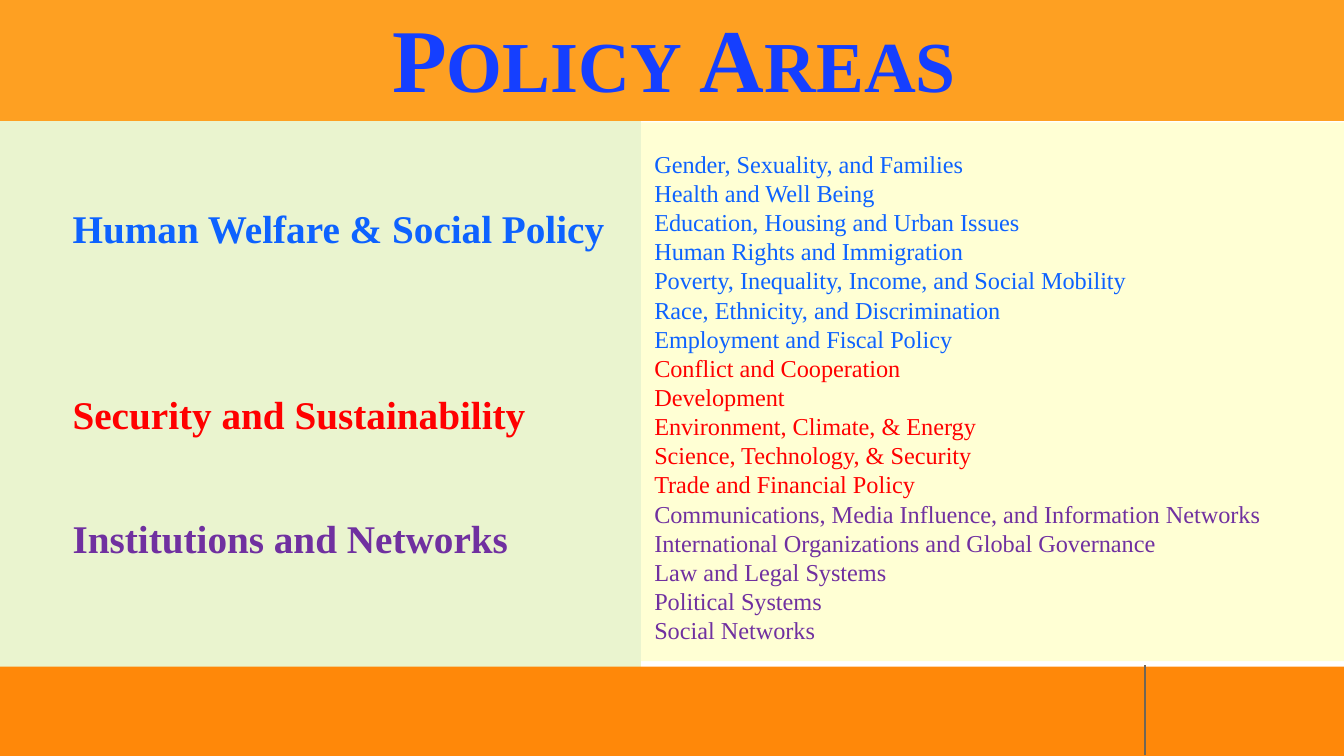
from dataclasses import dataclass

from lxml.etree import SubElement
from pptx import Presentation
from pptx.dml.color import RGBColor
from pptx.enum.shapes import MSO_CONNECTOR, MSO_SHAPE
from pptx.enum.text import MSO_ANCHOR, PP_ALIGN
from pptx.oxml.ns import qn
from pptx.slide import Slide
from pptx.util import Inches, Pt

COLORS = {
    "title": "153FFF",
    "welfare": "0D62FF",
    "security": "FF0000",
    "networks": "7030A0",
    "green": "94C600",
    "yellow": "FFFF00",
    "header": "FEA022",
    "footer": "FF8809",
    "divider": "6F6657",
}
FONT = "Times New Roman"


@dataclass
class Panel:
    left: float
    top: float
    width: float
    height: float
    color: str
    opacity: int = 100


@dataclass
class Area:
    name: str
    color: str
    space_before: float
    topics: list[str]


PANELS = [
    Panel(0, 0.9, 4.77, 4.09, "green", 19),
    Panel(4.77, 0.91, 5.23, 4.01, "yellow", 17),
    Panel(0, 0, 10, 0.9, "header"),
    Panel(0, 4.96, 10, 0.68, "footer"),
]

AREAS = [
    Area("Human Welfare & Social Policy", "welfare", 0, [
        "Gender, Sexuality, and Families",
        "Health and Well Being",
        "Education, Housing and Urban Issues",
        "Human Rights and Immigration",
        "Poverty, Inequality, Income, and Social Mobility",
        "Race, Ethnicity, and Discrimination",
        "Employment and Fiscal Policy",
    ]),
    Area("Security and Sustainability", "security", 74.4, [
        "Conflict and Cooperation",
        "Development",
        "Environment, Climate, & Energy",
        "Science, Technology, & Security",
        "Trade and Financial Policy",
    ]),
    Area("Institutions and Networks", "networks", 41.2, [
        "Communications, Media Influence, and Information Networks",
        "International Organizations and Global Governance",
        "Law and Legal Systems",
        "Political Systems",
        "Social Networks",
    ]),
]


def rgb(name: str) -> RGBColor:
    """Return the named palette colour."""
    return RGBColor.from_string(COLORS[name])


def add_panel(s: Slide, panel: Panel) -> None:
    """Draw a borderless filled rectangle."""
    sp = s.shapes.add_shape(
        MSO_SHAPE.RECTANGLE, Inches(panel.left), Inches(panel.top),
        Inches(panel.width), Inches(panel.height))
    sp.shadow.inherit = False
    sp.line.fill.background()
    sp.fill.solid()
    sp.fill.fore_color.rgb = rgb(panel.color)
    if panel.opacity < 100:
        clr = sp._element.spPr.find(qn("a:solidFill"))[0]
        SubElement(clr, qn("a:alpha"), val=str(panel.opacity * 1000))


def add_divider(s: Slide) -> None:
    """Draw the thin vertical line in the footer."""
    line = s.shapes.add_connector(
        MSO_CONNECTOR.STRAIGHT, Inches(8.52), Inches(4.95), Inches(8.52), Inches(5.62))
    line.line.color.rgb = rgb("divider")
    line.line.width = Pt(0.75)
    SubElement(line._element.spPr, qn("a:effectLst"))


def add_run(p, text: str, size: float, color: str, bold: bool = False):
    """Add a formatted run to a paragraph."""
    r = p.add_run()
    r.text = text
    r.font.name = FONT
    r.font.size = Pt(size)
    r.font.bold = bold
    r.font.color.rgb = rgb(color)
    return r


def add_text_box(s: Slide, left: float, top: float, width: float, height: float):
    """Add a wrapping text box and return its text frame."""
    tf = s.shapes.add_textbox(
        Inches(left), Inches(top), Inches(width), Inches(height)).text_frame
    tf.word_wrap = True
    return tf


def add_line(tf, text: str, size: float, spacing: float, color: str,
             space_before: float = 0, bold: bool = False) -> None:
    """Add a paragraph, using the empty first one when available."""
    p = tf.paragraphs[0] if not tf.paragraphs[0].runs else tf.add_paragraph()
    p.line_spacing = Pt(spacing)
    p.space_before = Pt(space_before)
    add_run(p, text, size, color, bold)


def add_title(s: Slide) -> None:
    """Place the small-caps title in front of the header band."""
    title = s.shapes.title
    title.left, title.top = Inches(1.93), Inches(-0.1)
    title.width, title.height = Inches(6.17), Inches(1.04)
    tf = title.text_frame
    tf.vertical_anchor = MSO_ANCHOR.MIDDLE
    p = tf.paragraphs[0]
    p.alignment = PP_ALIGN.CENTER
    r = add_run(p, "Policy Areas", 48, "title", True)
    r._r.get_or_add_rPr().set("cap", "small")
    s.shapes._spTree.append(title._element)


def main() -> None:
    """Build and save the slide."""
    prs = Presentation()
    prs.slide_width = Inches(10)
    prs.slide_height = prs.slide_width * 9 // 16
    s = prs.slides.add_slide(prs.slide_layouts[5])
    for panel in PANELS:
        add_panel(s, panel)
    add_divider(s)
    topics = add_text_box(s, 4.77, 1.06, 4.84, 3.93)
    add_title(s)
    names = add_text_box(s, 0.47, 1.48, 4.2, 3.28)
    names.margin_left = names.margin_right = Inches(0.07)
    names.margin_top = names.margin_bottom = Inches(0.04)
    for area in AREAS:
        add_line(names, area.name, 21, 25.2, area.color, area.space_before, True)
        for topic in area.topics:
            add_line(topics, topic, 13, 15.62, area.color)
    prs.save("out.pptx")


if __name__ == "__main__":
    main()
